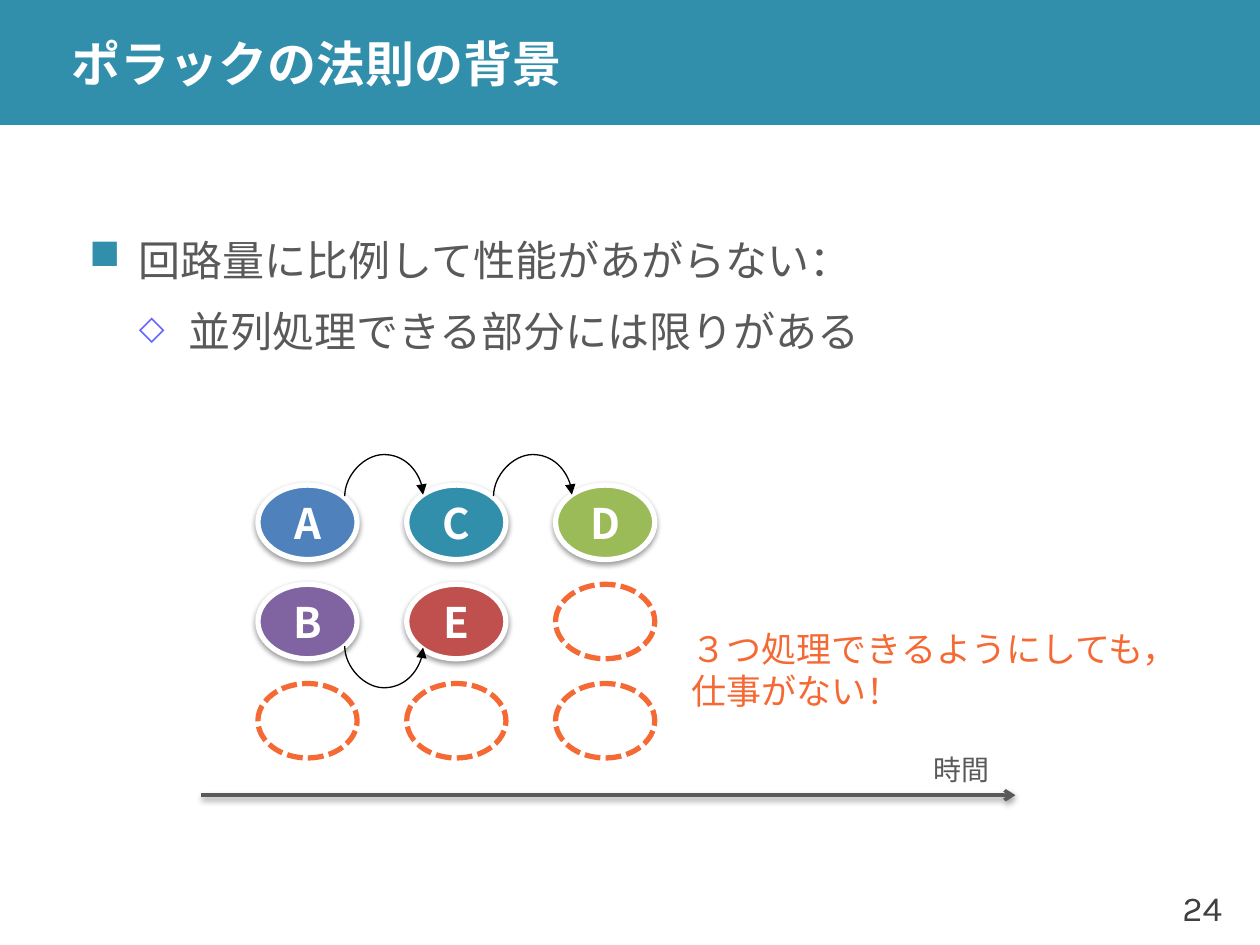
import pptx
import pptx.util
import pptx.dml.color
import pptx.enum.dml
import pptx.enum.shapes
import pptx.enum.text
import pptx.oxml
import pptx.oxml.ns
from dataclasses import dataclass

Cm, Pt = pptx.util.Cm, pptx.util.Pt
SHAPE = pptx.enum.shapes.MSO_SHAPE
LINK = pptx.enum.shapes.MSO_CONNECTOR
ALIGN = pptx.enum.text.PP_ALIGN
ANCHOR = pptx.enum.text.MSO_ANCHOR


@dataclass(frozen=True)
class Theme:
    font: str = "Karla"
    node_font: str = "Noto Sans CJK JP"
    teal: str = "328FAC"
    white: str = "FFFFFF"
    black: str = "000000"
    grey: str = "595959"
    dark: str = "404040"
    orange: str = "F56935"
    violet: str = "6666FF"
    title: int = 28
    body: int = 24
    note: int = 20
    label: int = 16


T = Theme()

TITLE = "ポラックの法則の背景"
PAGE = "24"
BULLETS = [  # text, bullet format, space before, space after
    ("回路量に比例して性能があがらない：", dict(char="■", color=T.teal, size=100, left=1), 24, 6),
    ("並列処理できる部分には限りがある", dict(char="◇", color=T.violet, size=80, left=2), 3, 3),
]
TASKS = [  # rows are processing units, columns are time steps; None is an idle slot
    [("A", "4F81BD"), ("C", T.teal), ("D", "9BBB59")],
    [("B", "8064A2"), ("E", "C0504D"), None],
    [None, None, None],
]
DEPENDENCIES = [(0, 0, "over"), (1, 0, "under"), (0, 1, "over")]  # row, column, side
NOTE = "３つ処理できるようにしても，\n仕事がない！"
TIME = "時間"

GRID_LEFT, GRID_TOP = 5.2, 9.78
STEP_X, STEP_Y = 3, 2
NODE_W, NODE_H = 2, 1.5
ARC_SPAN, ARC_RISE, ARC_SKEW = 1.58, 0.84, 0.03


def rgb(value):
    return pptx.dml.color.RGBColor.from_string(value)


def add_xml(parent, xml):
    ns = pptx.oxml.ns.nsdecls("a")
    parent.append(pptx.oxml.parse_xml(xml.replace("/>", f" {ns}/>", 1) if xml.count("<") == 1
                                      else xml.replace(">", f" {ns}>", 1)))


def set_effects(s, shadow=False):
    """Replace the inherited effect; call after the fill and line are set."""
    if shadow:
        add_xml(s.element.spPr,
                '<a:effectLst><a:outerShdw blurRad="40000" dist="20000" dir="5400000" rotWithShape="0">'
                f'<a:srgbClr val="{T.black}"><a:alpha val="38000"/></a:srgbClr>'
                '</a:outerShdw></a:effectLst>')
    else:
        add_xml(s.element.spPr, "<a:effectLst/>")


def write(p, text, *, size, color, font=T.font, bold=False, align=ALIGN.LEFT,
          left=0, bullet=None, before=0, after=0, spacing=None):
    p.alignment = align
    p.space_before, p.space_after = Pt(before), Pt(after)
    if spacing:
        p.line_spacing = spacing
    pPr = p._p.get_or_add_pPr()
    pPr.set("marL", str(Cm(left)))
    if bullet:
        pPr.set("marL", str(Cm(bullet["left"])))
        pPr.set("indent", str(Cm(-1)))
        add_xml(pPr, f'<a:buClr><a:srgbClr val="{bullet["color"]}"/></a:buClr>')
        add_xml(pPr, f'<a:buSzPct val="{bullet["size"] * 1000}"/>')
        add_xml(pPr, f'<a:buChar char="{bullet["char"]}"/>')
    for i, line in enumerate(text.split("\n")):
        if i:
            p.add_line_break()
        r = p.add_run()
        r.text = line
        r.font.name, r.font.size, r.font.bold = font, Pt(size), bold
        r.font.color.rgb = rgb(color)


def add_box(slide, x, y, w, h, anchor=ANCHOR.TOP):
    tf = slide.shapes.add_textbox(Cm(x), Cm(y), Cm(w), Cm(h)).text_frame
    tf.word_wrap = True
    tf.vertical_anchor = anchor
    return tf


def add_node(slide, row, col, task):
    s = slide.shapes.add_shape(SHAPE.OVAL, Cm(GRID_LEFT + col * STEP_X), Cm(GRID_TOP + row * STEP_Y),
                               Cm(NODE_W), Cm(NODE_H))
    name, fill = task or ("", T.white)
    s.fill.solid()
    s.fill.fore_color.rgb = rgb(fill)
    s.line.width = Pt(3)
    s.line.color.rgb = rgb(T.white if task else T.orange)
    if task:
        s.text_frame.word_wrap = False
        s.text_frame.vertical_anchor = ANCHOR.MIDDLE
        write(s.text_frame.paragraphs[0], name, size=T.body, color=T.white,
              font=T.node_font, bold=True, align=ALIGN.CENTER)
    else:
        s.line.dash_style = pptx.enum.dml.MSO_LINE.SQUARE_DOT
    set_effects(s, shadow=bool(task))


def add_arrow(slide, kind, start, end, color, width, head, shadow=False):
    s = slide.shapes.add_connector(kind, *(Cm(v) for v in start + end))
    s.line.color.rgb = rgb(color)
    s.line.width = Pt(width)
    add_xml(s.line._get_or_add_ln(), f'<a:tailEnd type="{head}"/>')
    set_effects(s, shadow)
    return s


def add_dependency(slide, row, col, side):
    """Curve from a task to the next one: a thin connector turned upright."""
    over = side == "over"
    cx = GRID_LEFT + col * STEP_X + 2.54
    cy = GRID_TOP + row * STEP_Y + (0.21 if over else NODE_H - 0.24)
    dx, dy = ARC_SKEW / 2, ARC_SPAN / 2
    if not over:
        dy = -dy
    s = add_arrow(slide, LINK.CURVE, (cx + dx, cy + dy), (cx - dx, cy - dy), T.black, 0.75, "triangle")
    spPr = s.element.spPr
    spPr.find(pptx.oxml.ns.qn("a:xfrm")).set("rot", str((90 if over else 270) * 60000))
    guides = spPr.find(pptx.oxml.ns.qn("a:prstGeom")).find(pptx.oxml.ns.qn("a:avLst"))
    add_xml(guides, f'<a:gd name="adj1" fmla="val {round(ARC_RISE / ARC_SKEW * 100000)}"/>')


def main():
    prs = pptx.Presentation()
    prs.slide_width, prs.slide_height = Cm(25.4), Cm(19.05)
    slide = prs.slides.add_slide(prs.slide_layouts[6])

    band = slide.shapes.add_shape(SHAPE.RECTANGLE, 0, 0, prs.slide_width, Cm(2.52))
    band.fill.solid()
    band.fill.fore_color.rgb = rgb(T.teal)
    band.line.fill.background()
    set_effects(band)

    tf = add_box(slide, 23.19, 17.53, 1.7, 1.52, ANCHOR.MIDDLE)
    write(tf.paragraphs[0], PAGE, size=T.note, color=T.dark, align=ALIGN.RIGHT)
    tf = add_box(slide, 1.2, 0, 24.2, 2.52, ANCHOR.MIDDLE)
    tf.margin_top = tf.margin_bottom = 0
    write(tf.paragraphs[0], TITLE, size=T.title, color=T.white, bold=True)

    tf = add_box(slide, 1.55, 3.53, 23.75, 4.75, ANCHOR.MIDDLE)
    for i, (text, bullet, before, after) in enumerate(BULLETS):
        p = tf.add_paragraph() if i else tf.paragraphs[0]
        write(p, text, size=T.body, color=T.grey, bullet=bullet,
              before=before, after=after, spacing=1.1)

    for row, tasks in enumerate(TASKS):
        for col, task in enumerate(tasks):
            add_node(slide, row, col, task)
    for dependency in DEPENDENCIES:
        add_dependency(slide, *dependency)

    add_arrow(slide, LINK.STRAIGHT, (4.06, 16.03), (20.47, 16.03), T.grey, 2, "arrow", shadow=True)
    write(add_box(slide, 17.3, 15.04, 2.95, 0.94).paragraphs[0], TIME,
          size=T.label, color=T.grey, left=1.27)
    write(add_box(slide, 12.42, 12.52, 11.76, 1.96).paragraphs[0], NOTE,
          size=T.note, color=T.orange, left=1.27)

    prs.save("out.pptx")


if __name__ == "__main__":
    main()
